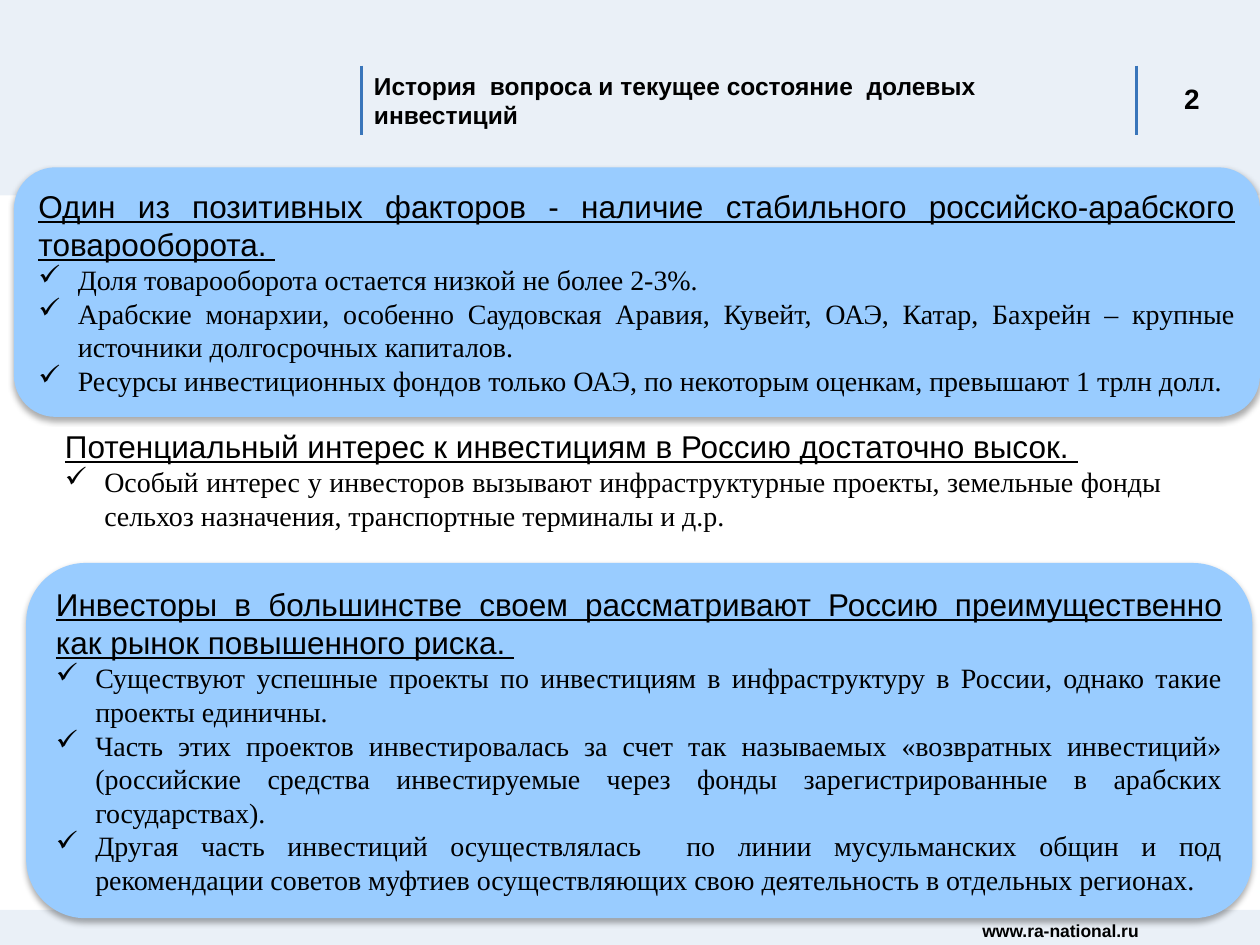
import pptx
import pptx.util
import pptx.dml.color
import pptx.enum.shapes
import pptx.enum.text
import pptx.oxml.ns
import lxml.etree

Pt = pptx.util.Pt
RGBColor = pptx.dml.color.RGBColor
Shape = pptx.enum.shapes.MSO_SHAPE
Align = pptx.enum.text.PP_ALIGN
Anchor = pptx.enum.text.MSO_ANCHOR
qn = pptx.oxml.ns.qn

BLUE = RGBColor(0x39, 0x75, 0xBA)
SKY = RGBColor(0x99, 0xCC, 0xFF)
BLACK = RGBColor(0, 0, 0)
HEAD = "Arial"
BODY = "Times New Roman"
INDENT = 22.5

TITLE = "История  вопроса и текущее состояние  долевых инвестиций"
TRADE = [
    "Один из позитивных факторов - наличие стабильного российско-арабского товарооборота. ",
    "Доля товарооборота остается низкой не более 2-3%.",
    "Арабские монархии, особенно Саудовская Аравия, Кувейт, ОАЭ, Катар, Бахрейн – крупные источники долгосрочных капиталов.",
    "Ресурсы инвестиционных фондов только ОАЭ, по некоторым оценкам, превышают 1 трлн долл.",
]
DEMAND = [
    "Потенциальный интерес к инвестициям в Россию достаточно высок. ",
    "Особый интерес у инвесторов вызывают инфраструктурные проекты, земельные фонды сельхоз назначения, транспортные терминалы и д.р.",
]
RISK = [
    "Инвесторы в большинстве своем рассматривают Россию преимущественно как рынок повышенного риска. ",
    "Существуют успешные проекты по инвестициям в инфраструктуру в России, однако такие проекты единичны.",
    "Часть этих проектов инвестировалась за счет так называемых «возвратных инвестиций» (российские средства инвестируемые через фонды зарегистрированные в арабских государствах).",
    "Другая часть инвестиций осуществлялась  по линии мусульманских общин и под рекомендации советов муфтиев осуществляющих свою деятельность в отдельных регионах.",
]


def add_node(parent, tag, **attrs):
    """Append an XML element with the given attributes."""
    return lxml.etree.SubElement(parent, qn(tag), attrs)


def style(font, name, size):
    """Set face, size and colour of a font."""
    font.name, font.size = name, Pt(size)
    font.color.rgb = BLACK


def add_box(shapes, kind, box, color):
    """Add a filled shape without outline or shadow."""
    shape = shapes.add_shape(kind, *map(Pt, box))
    shape.fill.solid()
    shape.fill.fore_color.rgb = color
    shape.line.fill.background()
    shape.shadow.inherit = False
    return shape


def add_band(shapes, box):
    """Add a pale translucent band."""
    band = add_box(shapes, Shape.RECTANGLE, box, BLUE)
    tint = next(band.element.spPr.iter(qn("a:srgbClr")))
    add_node(tint, "a:alpha", val="10000")


def add_label(shapes, box, text, size, align):
    """Add a bold label centred vertically in its box."""
    frame = shapes.add_textbox(*map(Pt, box)).text_frame
    frame.word_wrap = True
    frame.vertical_anchor = Anchor.MIDDLE
    frame.text = text
    para = frame.paragraphs[0]
    para.alignment = align
    font = para.runs[0].font
    style(font, HEAD, size)
    font.bold = True


def add_rule(shapes, x, top, end):
    """Add a vertical rule."""
    rule = shapes.add_connector(
        pptx.enum.shapes.MSO_CONNECTOR.STRAIGHT, Pt(x), Pt(top), Pt(x), Pt(end))
    rule.line.color.rgb = BLUE
    rule.line.width = Pt(1.5)
    add_node(rule.element.spPr, "a:effectLst")


def add_header(shapes, x, y, w, h):
    """Draw the top band with title, rules and page number."""
    add_band(shapes, (x, y, w, h))
    left, right, top = x + 206.6, x + 649.5, y + 37.5
    for edge in (left, right):
        add_rule(shapes, edge, top, top + 39.5)
    add_label(shapes, (left, top, 425.5, 39.5), TITLE, 14, Align.LEFT)
    add_label(shapes, (right, top, 43, 37.5), "2", 16, Align.RIGHT)


def add_footer(shapes, x, y, w, h):
    """Draw the bottom band with the web address."""
    add_band(shapes, (x, y, w, h))
    add_label(shapes, (x + w - 228, y + 4, 228, 16), "www.ra-national.ru", 10, Align.CENTER)


def fill_text(frame, lines):
    """Write an underlined heading followed by ticked points."""
    frame.word_wrap = True
    frame.text = "\n".join(lines)
    for i, para in enumerate(frame.paragraphs):
        para.alignment = Align.JUSTIFY
        if i:
            props = para._p.get_or_add_pPr()
            props.set("marL", str(Pt(INDENT)))
            props.set("indent", str(-Pt(INDENT)))
            add_node(props, "a:buChar", char="✓")
        font = para.runs[0].font
        style(font, BODY if i else HEAD, 16 if i else 18)
        font.underline = not i


def add_panel(shapes, box, lines):
    """Draw a rounded panel with a soft shadow and its text."""
    panel = add_box(shapes, Shape.ROUNDED_RECTANGLE, box, SKY)
    glow = add_node(
        panel.element.spPr.find(qn("a:effectLst")), "a:outerShdw",
        blurRad=str(Pt(3.5)), dist=str(Pt(2.2)), dir="5400000", rotWithShape="0")
    tint = add_node(glow, "a:srgbClr", val=str(BLACK))
    add_node(tint, "a:alpha", val="32000")
    panel.text_frame.vertical_anchor = Anchor.MIDDLE
    fill_text(panel.text_frame, lines)


def add_note(shapes, box, lines):
    """Draw a plain text block that grows with its text."""
    frame = shapes.add_textbox(*map(Pt, box)).text_frame
    fill_text(frame, lines)
    frame.auto_size = pptx.enum.text.MSO_AUTO_SIZE.SHAPE_TO_FIT_TEXT


def main():
    """Build and save the slide."""
    deck = pptx.Presentation()
    deck.slide_width, deck.slide_height = Pt(720), Pt(540)
    shapes = deck.slides.add_slide(deck.slide_layouts[6]).shapes
    add_footer(shapes, 0, 520, 720, 20)
    add_header(shapes, 0, 0, 720, 111.6)
    add_panel(shapes, (8, 95.6, 712, 142.6), TRADE)
    add_panel(shapes, (15, 321.7, 700.6, 203), RISK)
    add_note(shapes, (30, 240.5, 641, 67.5), DEMAND)
    deck.save("out.pptx")


if __name__ == "__main__":
    main()
